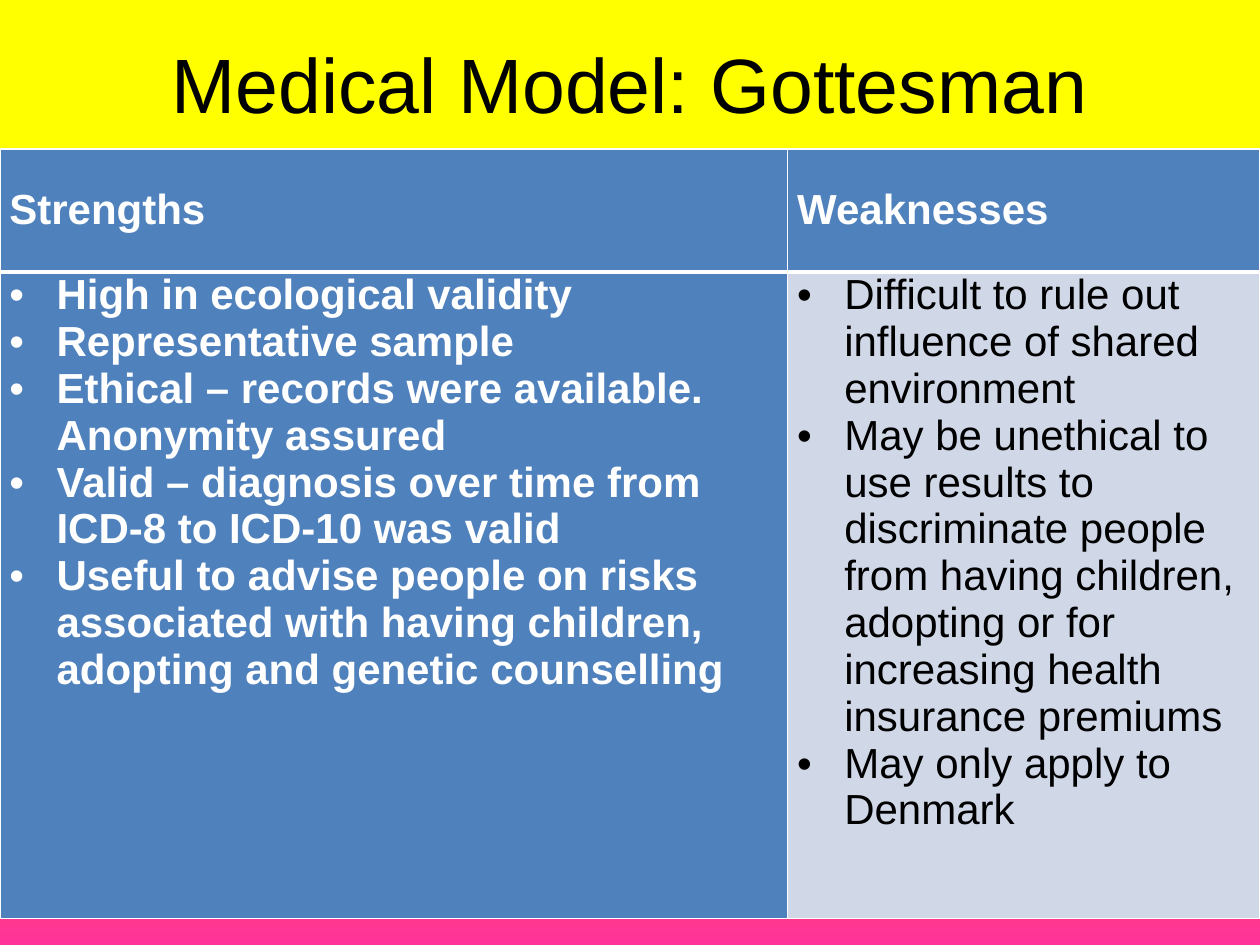
"""Build the Medical Model strengths and weaknesses slide."""
import lxml.etree
import pptx
import pptx.dml.color
import pptx.enum.text
import pptx.oxml
import pptx.oxml.ns
import pptx.util
from pptx.util import Cm

FONT = "Arial"
WHITE, BLACK, BLUE, PALE = "FFFFFF", "000000", "4F81BD", "D0D8E8"
GRADIENT = ["FF3399", "FF6633", "FFFF00", "01A78F", "3366FF"]
INDENT = Cm(0.95)
MIDDLE = pptx.enum.text.MSO_ANCHOR.MIDDLE
TOP = pptx.enum.text.MSO_ANCHOR.TOP

STRENGTHS = [
    "High in ecological validity",
    "Representative sample",
    "Ethical – records were available. Anonymity assured",
    "Valid – diagnosis over time from ICD-8 to ICD-10 was valid",
    "Useful to advise people on risks associated with having children, "
    "adopting and genetic counselling",
]
WEAKNESSES = [
    "Difficult to rule out influence of shared environment",
    "May be unethical to use results to discriminate people from having "
    "children, adopting or for increasing health insurance premiums",
    "May only apply to Denmark",
]


def color(value):
    """Return the colour for a hex string."""
    return pptx.dml.color.RGBColor.from_string(value)


def add_xml(parent, tag, **attributes):
    """Append a DrawingML element to a parent and return it."""
    return lxml.etree.SubElement(parent, pptx.oxml.ns.qn(tag), attributes)


def paint(fill, value):
    """Make a fill solid in one colour."""
    fill.solid()
    fill.fore_color.rgb = color(value)


def write(para, text, size=24, ink=BLACK, bold=False, align=None, bullet=False):
    """Add formatted text to a paragraph, with a bullet if wanted."""
    span = para.add_run()
    span.text = text
    span.font.name = FONT
    span.font.size = pptx.util.Pt(size)
    span.font.bold = bold
    span.font.color.rgb = color(ink)
    if align is not None:
        para.alignment = align
    if bullet:
        props = para._p.get_or_add_pPr()
        props.set("marL", str(INDENT))
        props.set("indent", str(-INDENT))
        add_xml(props, "a:buFont", typeface=FONT)
        add_xml(props, "a:buChar", char="•")


def set_background(page):
    """Give the page a five-colour gradient that rises from the bottom."""
    fill = page.background.fill
    fill.gradient()
    gradient = page.background._cSld.find(".//" + pptx.oxml.ns.qn("a:gradFill"))
    for child in list(gradient):
        gradient.remove(child)
    stops = add_xml(gradient, "a:gsLst")
    for index, value in enumerate(GRADIENT):
        stop = add_xml(stops, "a:gs", pos=str(index * 25000))
        add_xml(stop, "a:srgbClr", val=value)
    add_xml(gradient, "a:lin", ang=str(270 * 60000), scaled="0")


def set_borders(cell, **widths):
    """Draw white cell borders, one point wide unless a side says otherwise."""
    props = cell._tc.get_or_add_tcPr()
    for side in "LRTB":
        width = pptx.util.Pt(widths.get(side, 1))
        line = add_xml(props, "a:ln" + side, w=str(width))
        add_xml(add_xml(line, "a:solidFill"), "a:srgbClr", val=WHITE)


def fill_cell(cell, lines, fill, anchor=TOP, borders=None, **style):
    """Set the text, borders and fill of a table cell."""
    cell.margin_left = cell.margin_right = Cm(0.19)
    cell.margin_top = cell.margin_bottom = 0
    cell.vertical_anchor = anchor
    set_borders(cell, **(borders or {}))
    paint(cell.fill, fill)
    frame = cell.text_frame
    for index, text in enumerate(lines):
        para = frame.add_paragraph() if index else frame.paragraphs[0]
        write(para, text, **style)


def add_title(page, text):
    """Place the title on a yellow band across the top."""
    box = page.shapes.title
    box.left, box.top, box.width, box.height = 0, 0, Cm(25.4), Cm(3.33)
    paint(box.fill, "FFFF00")
    box.text_frame.vertical_anchor = MIDDLE
    write(box.text_frame.paragraphs[0], text, size=44,
          align=pptx.enum.text.PP_ALIGN.CENTER)


def add_comparison(page):
    """Add the table of strengths and weaknesses."""
    widths, heights = [Cm(15.88), Cm(9.52)], [Cm(2.48), Cm(13.04)]
    table = page.shapes.add_table(
        2, 2, 0, Cm(3), sum(widths), sum(heights)).table
    table.horz_banding = False
    columns = [("Strengths", STRENGTHS, BLUE, WHITE, True),
               ("Weaknesses", WEAKNESSES, PALE, BLACK, False)]
    for index, (heading, points, fill, ink, bold) in enumerate(columns):
        table.columns[index].width = widths[index]
        table.rows[index].height = heights[index]
        fill_cell(table.cell(0, index), [heading], BLUE, anchor=MIDDLE,
                  borders={"B": 3}, ink=WHITE, bold=True)
        fill_cell(table.cell(1, index), points, fill, borders={"T": 3},
                  ink=ink, bold=bold, bullet=True)


def main():
    """Build and save the deck."""
    deck = pptx.Presentation()
    deck.slide_width, deck.slide_height = Cm(25.4), Cm(19.05)
    page = deck.slides.add_slide(deck.slide_layouts.get_by_name("Title Only"))
    set_background(page)
    add_title(page, "Medical Model: Gottesman")
    add_comparison(page)
    deck.save("out.pptx")


if __name__ == "__main__":
    main()
